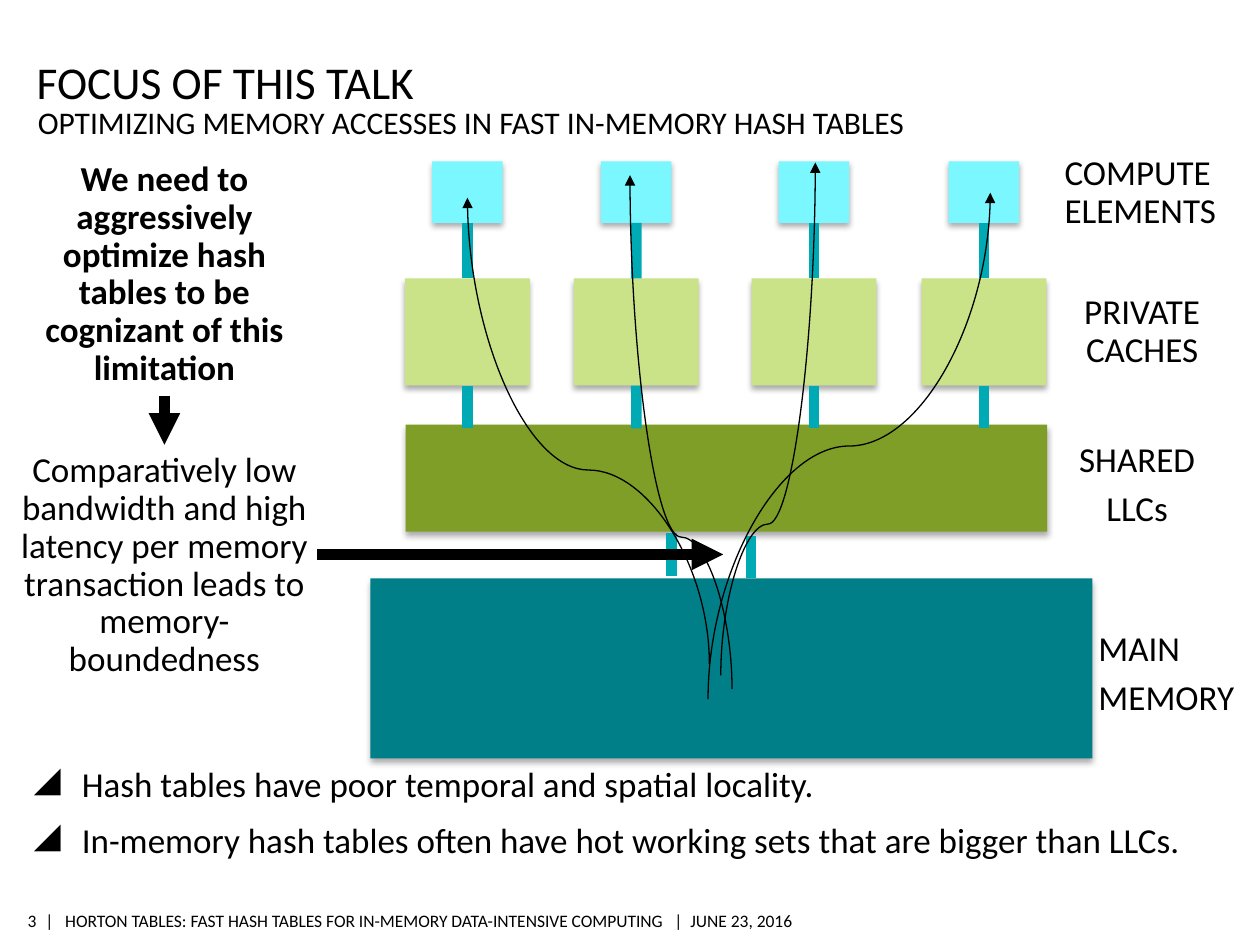
from lxml.etree import SubElement
from pptx import Presentation
from pptx.dml.color import RGBColor
from pptx.enum.shapes import MSO_CONNECTOR, MSO_SHAPE
from pptx.enum.text import MSO_ANCHOR, MSO_AUTO_SIZE, PP_ALIGN
from pptx.oxml.ns import qn
from pptx.util import Inches, Pt

BLACK = RGBColor(0x00, 0x00, 0x00)
CYAN = RGBColor(0x7B, 0xF7, 0xFF)
LIME = RGBColor(0xCA, 0xE2, 0x88)
OLIVE = RGBColor(0x7E, 0x9E, 0x27)
TEAL = RGBColor(0x00, 0x7F, 0x88)
BUS_TEAL = RGBColor(0x00, 0xAA, 0xB5)
LEFT, CENTER, RIGHT = PP_ALIGN.LEFT, PP_ALIGN.CENTER, PP_ALIGN.RIGHT

# Content: boxes are (left, top, width, height) in inches
TITLE = "FOCUS OF THIS TALK"
SUBTITLE = "OPTIMIZING MEMORY ACCESSES IN FAST IN-MEMORY HASH TABLES"
BULLETS = [
    "Hash tables have poor temporal and spatial locality.",
    "In-memory hash tables often have hot working sets that are bigger than LLCs.",
]
FOOTER = ("|   HORTON TABLES: FAST HASH TABLES FOR IN-MEMORY DATA-INTENSIVE "
          "COMPUTING   |  JUNE 23, 2016")
PAGE_NUMBER = "3"
NEED = "We need to aggressively optimize hash tables to be cognizant of this limitation"
REASON = ("Comparatively low bandwidth and high latency per memory transaction "
          "leads to memory-boundedness")
LEVEL_LABELS = [
    (["MAIN", "MEMORY"], (8.62, 4.96, 1.33, 0.79), LEFT),
    (["SHARED", "LLCs"], (8.39, 3.46, 1.27, 0.79), CENTER),
    (["PRIVATE CACHES"], (8.46, 2.28, 1.21, 0.71), CENTER),
    (["COMPUTE ELEMENTS"], (8.35, 1.18, 1.59, 0.71), LEFT),
]

# Memory hierarchy
CORE_CENTERS = [3.71, 5.05, 6.46, 7.81]
ELEMENT_TOP, ELEMENT_W, ELEMENT_H = 1.28, 0.56, 0.49
CACHE_TOP, CACHE_W, CACHE_H = 2.21, 0.99, 0.85
SHARED_BOX = (3.22, 3.37, 5.09, 0.85)
MEMORY_BOX = (2.94, 4.59, 5.73, 1.43)
CACHE_BUS_END = 3.4
MEMORY_BUSES = [(5.33, 4.23), (5.96, 4.25)]
MEMORY_BUS_LENGTH = 0.34
# Access paths: start in memory, end in a compute element, bend position
ACCESS_PATHS = [
    ((5.63, 5.27), (3.71, 1.57), 0.416),
    ((5.81, 5.47), (5.00, 1.39), 0.296),
    ((5.72, 5.36), (6.47, 1.29), 0.295),
    ((5.62, 5.55), (7.86, 1.53), 0.5),
]

prs = Presentation()
prs.slide_width, prs.slide_height = Inches(10), Inches(7.5)
slide = prs.slides.add_slide(prs.slide_layouts[6])
shapes = slide.shapes


def add_text(paragraphs, box, size, align=LEFT, anchor=MSO_ANCHOR.MIDDLE,
             insets=(0.1, 0.05, 0.1, 0.05), wrap=True, grow=False,
             bold=False, line=1.0, before=0, after=0, bullet=None):
    text_box = shapes.add_textbox(*map(Inches, box))
    frame = text_box.text_frame
    frame.text = "\n".join(paragraphs)
    frame.word_wrap = wrap
    frame.auto_size = MSO_AUTO_SIZE.SHAPE_TO_FIT_TEXT if grow else MSO_AUTO_SIZE.NONE
    frame.vertical_anchor = anchor
    (frame.margin_left, frame.margin_top,
     frame.margin_right, frame.margin_bottom) = map(Inches, insets)
    for index, paragraph in enumerate(frame.paragraphs):
        paragraph.alignment = align
        paragraph.line_spacing = line
        paragraph.space_before = Pt(before if index else 0)
        paragraph.space_after = Pt(after)
        if bullet:
            properties = paragraph._p.get_or_add_pPr()
            properties.set("marL", str(Inches(0.38)))
            properties.set("indent", str(-Inches(0.38)))
            SubElement(properties, qn("a:buChar")).set("char", bullet)
        font = paragraph.runs[0].font
        font.name, font.size, font.bold = "Calibri", Pt(size), bold
        font.color.rgb = BLACK
    return text_box


def add_callout(paragraphs, box, align=CENTER, bold=False):
    return add_text(paragraphs, box, 20, align, grow=True, bold=bold,
                    line=0.9, before=3, after=3)


def add_block(box, color):
    block = shapes.add_shape(MSO_SHAPE.RECTANGLE, *map(Inches, box))
    block.fill.solid()
    block.fill.fore_color.rgb = color
    block.line.fill.background()
    block.shadow.inherit = False
    effects = block._element.spPr.find(qn("a:effectLst"))
    shadow = SubElement(effects, qn("a:outerShdw"), blurRad=str(Pt(3.5)),
                        dist=str(Pt(2.2)), dir="5400000", rotWithShape="0")
    shade = SubElement(shadow, qn("a:srgbClr"), val=str(BLACK))
    SubElement(shade, qn("a:alpha"), val="32000")
    return block


def add_line(start, end, color, width, arrow=False, kind=MSO_CONNECTOR.STRAIGHT):
    line = shapes.add_connector(kind, *map(Inches, (*start, *end)))
    line.line.color.rgb = color
    line.line.width = Pt(width)
    if arrow:
        SubElement(line.line._get_or_add_ln(), qn("a:tailEnd"), type="triangle")
    SubElement(line._element.spPr, qn("a:effectLst"))
    return line


def add_access_path(start, end, bend):
    """Upward S-curve: a horizontal one turned a quarter about its centre."""
    (x1, y1), (x2, y2) = start, end
    mid_x, mid_y = (x1 + x2) / 2, (y1 + y2) / 2
    turn = 1 if x2 > x1 else -1
    half_length, half_width = turn * (y1 - y2) / 2, abs(x2 - x1) / 2
    curve = add_line((mid_x + half_length, mid_y + half_width),
                     (mid_x - half_length, mid_y - half_width),
                     BLACK, 0.75, True, MSO_CONNECTOR.CURVE)
    properties = curve._element.spPr
    properties.find(qn("a:xfrm")).set("rot", str(turn * 90 % 360 * 60000))
    adjustments = properties.find(qn("a:prstGeom")).find(qn("a:avLst"))
    SubElement(adjustments, qn("a:gd"), name="adj1", fmla=f"val {round(bend * 100000)}")


# Footer, headings and bullets
FOOTER_INSETS = (0, 0.04, 0, 0.04)
add_text([FOOTER], (0.36, 7.18, 6.08, 0.26), 10, insets=FOOTER_INSETS,
         wrap=False, grow=True)
add_text([PAGE_NUMBER], (0.13, 7.18, 0.16, 0.26), 10, RIGHT,
         insets=FOOTER_INSETS, wrap=False, grow=True)
add_text([TITLE], (0.29, 0.34, 8.4, 0.52), 26, anchor=MSO_ANCHOR.BOTTOM,
         insets=(0, 0.05, 0, 0))
add_text(BULLETS, (0.27, 6, 9.4, 1.19), 20, anchor=MSO_ANCHOR.TOP,
         insets=(0, 0.05, 0, 0.05), before=8, bullet="◢")
add_text([SUBTITLE], (0.3, 0.82, 8.4, 0.31), 18, anchor=MSO_ANCHOR.TOP,
         insets=(0, 0, 0, 0))

# Memory hierarchy blocks
add_block(SHARED_BOX, OLIVE)
add_block(MEMORY_BOX, TEAL)
cores = [
    (center,
     add_block((center - ELEMENT_W / 2, ELEMENT_TOP, ELEMENT_W, ELEMENT_H), CYAN),
     add_block((center - CACHE_W / 2, CACHE_TOP, CACHE_W, CACHE_H), LIME))
    for center in CORE_CENTERS
]

# Buses between the levels
for center, element, cache in cores:
    core_bus = add_line((center, ELEMENT_TOP + ELEMENT_H), (center, CACHE_TOP), BUS_TEAL, 6)
    core_bus.begin_connect(element, 2)
    core_bus.end_connect(cache, 0)
    cache_bus = add_line((center, CACHE_TOP + CACHE_H), (center, CACHE_BUS_END), BUS_TEAL, 6)
    cache_bus.begin_connect(cache, 2)
for x, top in MEMORY_BUSES:
    add_line((x, top), (x, top + MEMORY_BUS_LENGTH), BUS_TEAL, 6)

# Level labels and the argument on the left
for label, box, align in LEVEL_LABELS:
    add_callout(label, box, align)
add_line((2.52, 4.4), (5.74, 4.4), BLACK, 6, arrow=True)
reason = add_callout([REASON], (0.04, 3.53, 2.53, 1.92))
need = add_callout([NEED], (0.18, 1.22, 2.25, 1.92), bold=True)
need_arrow = add_line((1.3, 3.14), (1.3, 3.53), BLACK, 6, arrow=True)
need_arrow.begin_connect(need, 2)
need_arrow.end_connect(reason, 0)

# Memory access paths
for access_path in ACCESS_PATHS:
    add_access_path(*access_path)

prs.save("out.pptx")
